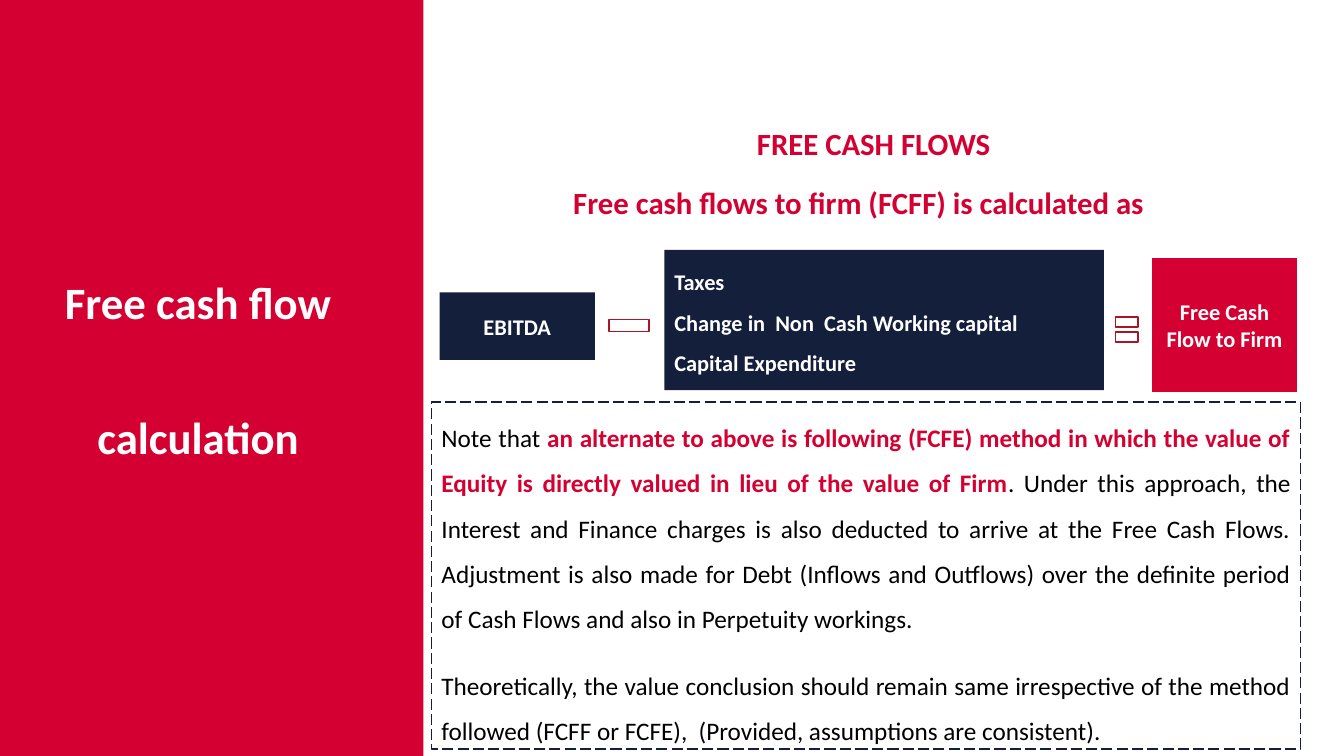
from pptx import Presentation
from pptx.dml.color import RGBColor
from pptx.enum import dml, shapes, text
from pptx.util import Pt

PX = 9144  # 100 px to the inch


class Theme:
    font = "Calibri"
    red = RGBColor(0xD5, 0x00, 0x32)
    navy = RGBColor(0x14, 0x1F, 0x3C)
    sign_line = RGBColor(0xA9, 0x15, 0x27)
    white = RGBColor(0xFF, 0xFF, 0xFF)
    black = RGBColor(0x00, 0x00, 0x00)
    title, heading, body, label = Pt(32), Pt(22), Pt(18), Pt(16)


KIND = shapes.MSO_SHAPE
ALIGN = text.PP_ALIGN
TOP, MIDDLE = text.MSO_ANCHOR.TOP, text.MSO_ANCHOR.MIDDLE


def add_block(kind, box, fill, line=None):
    sp = slide.shapes.add_shape(kind, *(n * PX for n in box))
    sp.shadow.inherit = False
    sp.fill.solid()
    sp.fill.fore_color.rgb = fill
    if line is None:
        sp.line.fill.background()
    else:
        sp.line.color.rgb = line
        sp.line.width = Pt(1)
    return sp


def write(sp, paragraphs, size, align, spacing=1.0, anchor=TOP):
    """Fill a shape with paragraphs, each a list of (text, colour, bold) runs."""
    tf = sp.text_frame
    tf.word_wrap = True
    tf.auto_size = text.MSO_AUTO_SIZE.NONE
    tf.vertical_anchor = anchor
    for i, runs in enumerate(paragraphs):
        p = tf.add_paragraph() if i else tf.paragraphs[0]
        p.alignment, p.line_spacing = align, spacing
        p.font.name, p.font.size = Theme.font, size
        for words, colour, bold in runs:
            r = p.add_run()
            r.text = words
            r.font.color.rgb, r.font.bold = colour, bold
    return tf


prs = Presentation()
prs.slide_width, prs.slide_height = 1333 * PX, 750 * PX
slide = prs.slides.add_slide(prs.slide_layouts[5])

# Red side panel with the title
title = slide.shapes.title
title.left, title.top, title.width, title.height = (n * PX for n in (19, 188, 355, 258))
write(title, [[("Free cash flow calculation", Theme.white, True)]],
      Theme.title, ALIGN.CENTER, 2.5)
panel = add_block(KIND.RECTANGLE, (0, 0, 420, 750), Theme.red)
title.element.addprevious(panel.element)

# Headings
for words, left, top in [
    ("FREE CASH FLOWS", 409, 119),
    ("Free cash flows to firm (FCFF) is calculated as", 394, 177),
]:
    heading = slide.shapes.add_textbox(left * PX, top * PX, 915 * PX, 47 * PX)
    write(heading, [[(words, Theme.red, True)]], Theme.heading, ALIGN.CENTER)

# Formula: EBITDA - deductions = free cash flow to firm
deductions = ["Taxes", "Change in  Non  Cash Working capital", "Capital Expenditure"]
for kind, box, fill, lines, align, spacing, anchor in [
    (KIND.RECTANGLE, (436, 290, 154, 67), Theme.navy, ["EBITDA"], ALIGN.CENTER, 1.0, MIDDLE),
    (KIND.RECTANGLE, (659, 248, 436, 139), Theme.navy, deductions, ALIGN.LEFT, 1.5, TOP),
    (KIND.FLOWCHART_PROCESS, (1143, 256, 143, 133), Theme.red,
     ["Free Cash Flow to Firm"], ALIGN.CENTER, 1.0, MIDDLE),
]:
    write(add_block(kind, box, fill), [[(words, Theme.white, True)] for words in lines],
          Theme.label, align, spacing, anchor)
for kind, box in [(KIND.MATH_MINUS, (597, 298, 54, 50)),
                  (KIND.MATH_EQUAL, (1102, 306, 31, 42))]:
    add_block(kind, box, Theme.white, Theme.sign_line)

# Note on the FCFE method
note = add_block(KIND.RECTANGLE, (428, 399, 862, 344), Theme.white, Theme.navy)
note.line.dash_style = dml.MSO_LINE.LONG_DASH
tf = write(note, [
    [("Note that ", Theme.black, False),
     ("an alternate to above is following (FCFE) method in which the value of Equity "
      "is directly valued in lieu of the value of Firm", Theme.red, True),
     (". Under this approach, the Interest and Finance charges is also deducted to "
      "arrive at the Free Cash Flows. Adjustment is also made for Debt (Inflows and "
      "Outflows) over the definite period of Cash Flows and also in Perpetuity "
      "workings.", Theme.black, False)],
    [("Theoretically, the value conclusion should remain same irrespective of the "
      "method followed (FCFF or FCFE),  (Provided, assumptions are consistent).",
      Theme.black, False)],
], Theme.body, ALIGN.JUSTIFY, 1.5)
tf.paragraphs[1].space_before = Pt(15)

prs.save("out.pptx")
